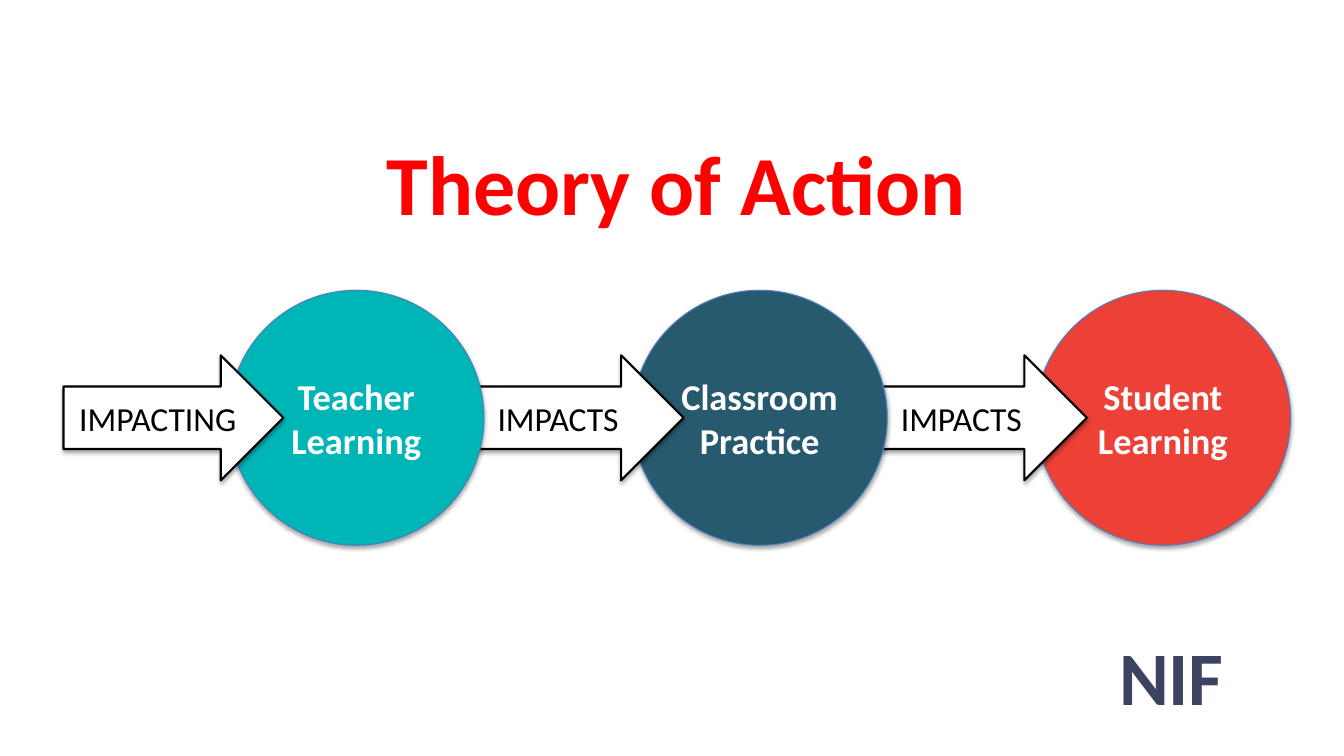
from dataclasses import dataclass

from lxml.etree import SubElement
from pptx import Presentation
from pptx.dml.color import RGBColor
from pptx.enum.shapes import MSO_SHAPE as Shape
from pptx.enum.text import MSO_ANCHOR as Anchor, MSO_AUTO_SIZE as Fit, PP_ALIGN as Align
from pptx.oxml.ns import qn
from pptx.util import Inches, Pt


@dataclass(frozen=True)
class Theme:
    font: str = "Calibri"
    title: str = "FF0000"
    brand: str = "3C4360"
    teal: str = "00B5B5"
    navy: str = "285A6F"
    red: str = "ED4138"
    rim: str = "4B7EBC"
    light: str = "FFFFFF"
    dark: str = "000000"
    title_size: int = 60
    brand_size: int = 54
    stage_size: int = 26
    arrow_size: int = 24


class Deck:
    """Places elements on a grid of tenth-inch columns and rows."""
    CELL = 0.1

    def __init__(self, prs, theme):
        self.theme = theme
        self.s = prs.slides.add_slide(prs.slide_layouts[5])

    def box(self, *cells):
        return [Inches(c * self.CELL) for c in cells]

    def add_text(self, sp, lines, size, color, bold=True, align=Align.CENTER, anchor=Anchor.MIDDLE):
        tf = sp.text_frame
        tf.word_wrap = True
        tf.auto_size = Fit.NONE
        tf.vertical_anchor = anchor
        for i, line in enumerate(lines):
            p = tf.add_paragraph() if i else tf.paragraphs[0]
            p.alignment = align
            r = p.add_run()
            r.text = line
            r.font.name = self.theme.font
            r.font.size = Pt(size)
            r.font.bold = bold
            r.font.color.rgb = RGBColor.from_string(color)

    def title(self, text, *cells):
        sp = self.s.shapes.title
        sp.left, sp.top, sp.width, sp.height = self.box(*cells)
        self.add_text(sp, [text], self.theme.title_size, self.theme.title, anchor=Anchor.TOP)

    def label(self, text, *cells):
        sp = self.s.shapes.add_textbox(*self.box(*cells))
        self.add_text(sp, [text], self.theme.brand_size, self.theme.brand,
                      align=Align.LEFT, anchor=Anchor.TOP)

    def solid(self, kind, cells, fill, line, weight):
        sp = self.s.shapes.add_shape(kind, *self.box(*cells))
        sp.fill.solid()
        sp.fill.fore_color.rgb = RGBColor.from_string(fill)
        sp.line.color.rgb = RGBColor.from_string(line)
        sp.line.width = Pt(weight)
        self.shadow(sp)
        return sp

    def shadow(self, sp):
        sp.shadow.inherit = False
        effects = sp._element.spPr.find(qn("a:effectLst"))
        outer = SubElement(effects, qn("a:outerShdw"), blurRad=str(Pt(3.1)),
                           dist=str(Pt(1.8)), dir="5400000", rotWithShape="0")
        color = SubElement(outer, qn("a:srgbClr"), val=self.theme.dark)
        SubElement(color, qn("a:alpha"), val="35000")

    def circle(self, lines, fill, *cells):
        sp = self.solid(Shape.OVAL, cells, fill, self.theme.rim, 0.75)
        self.add_text(sp, lines, self.theme.stage_size, self.theme.light)

    def arrow(self, text, *cells):
        sp = self.solid(Shape.RIGHT_ARROW, cells, self.theme.light, self.theme.dark, 1.5)
        self.add_text(sp, [text], self.theme.arrow_size, self.theme.dark, bold=False)


def main():
    prs = Presentation()
    prs.slide_width, prs.slide_height = Inches(13.33), Inches(7.5)
    theme = Theme()
    deck = Deck(prs, theme)

    # Title and organisation name
    deck.title("Theory of Action", 33.7, 12.5, 66.8, 11.1)
    deck.label("NIF", 110, 62, 12.5, 10.1)

    # Chain of stages, right to left so each circle covers the next arrow's tail
    first, step, top, size = 22.7, 40, 28.8, 25.3
    arrow_w, arrow_h = 21.8, 12.4
    stages = [
        ("IMPACTING", ["Teacher", "Learning"], theme.teal, 16.4),
        ("IMPACTS", ["Classroom", "Practice"], theme.navy, 16.7),
        ("IMPACTS", ["Student", "Learning"], theme.red, 16.7),
    ]
    for i, (verb, lines, fill, lead) in reversed(list(enumerate(stages))):
        left = first + i * step
        deck.circle(lines, fill, left, top, size, size)
        deck.arrow(verb, left - lead, top + (size - arrow_h) / 2, arrow_w, arrow_h)

    prs.save("out.pptx")


if __name__ == "__main__":
    main()
